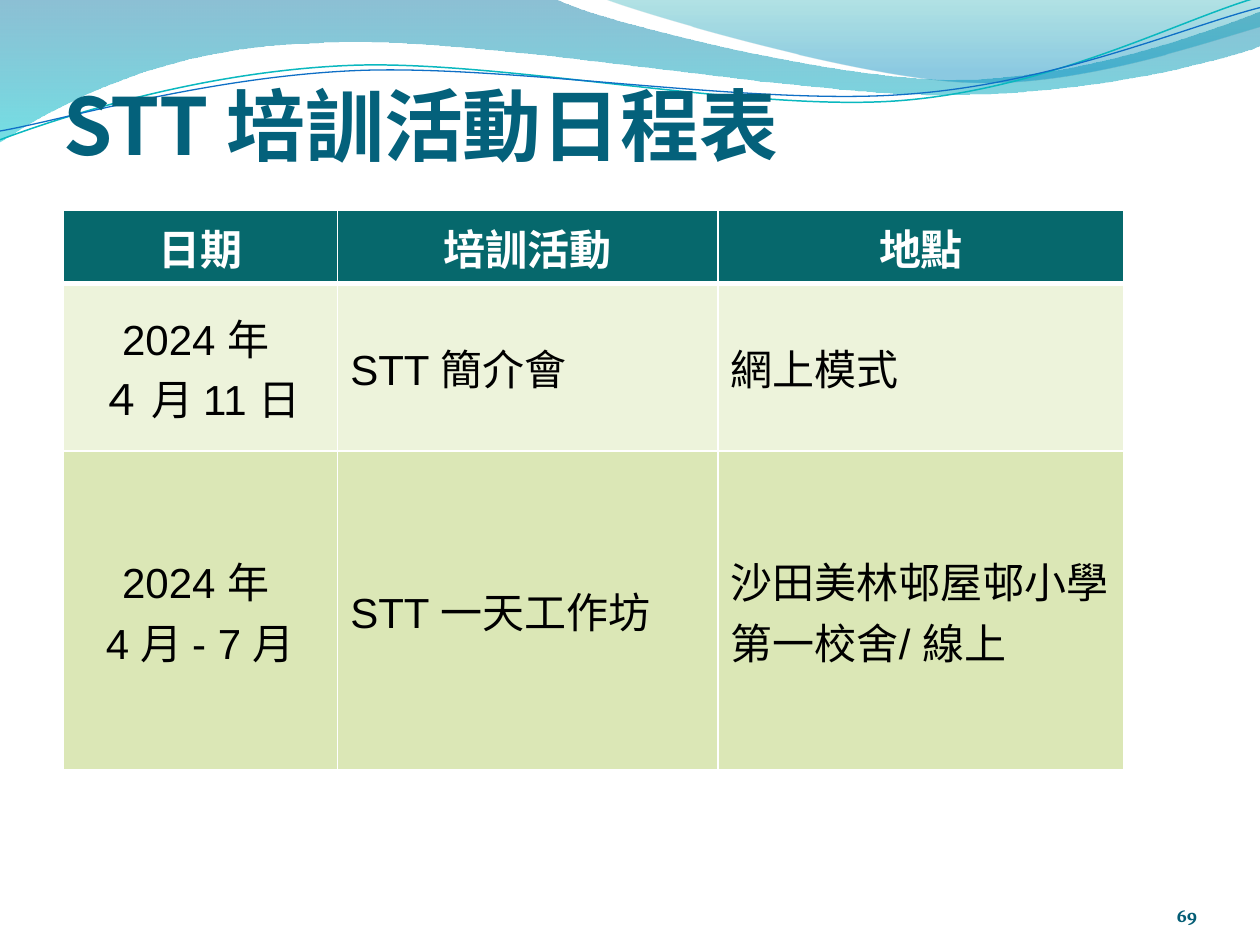
from math import cos, radians, sin

from lxml import etree
from pptx import Presentation
from pptx.dml.color import RGBColor
from pptx.enum.text import MSO_ANCHOR, PP_ALIGN
from pptx.oxml.ns import qn
from pptx.util import Inches, Pt

LEFT, CENTER, RIGHT = PP_ALIGN.LEFT, PP_ALIGN.CENTER, PP_ALIGN.RIGHT
TOP, MIDDLE, BOTTOM = MSO_ANCHOR.TOP, MSO_ANCHOR.MIDDLE, MSO_ANCHOR.BOTTOM

WHITE = RGBColor(0xFF, 0xFF, 0xFF)
BLACK = RGBColor(0x00, 0x00, 0x00)
TITLE_BLUE = RGBColor(0x04, 0x61, 0x7B)
NUMBER_BLUE = RGBColor(0x04, 0x5D, 0x75)
HEADER_TEAL = RGBColor(0x06, 0x68, 0x6C)
ROW_FILLS = [RGBColor(0xED, 0xF3, 0xDB), RGBColor(0xDB, 0xE7, 0xB6)]
WAVE_BLUE = RGBColor(0x00, 0x74, 0xA1)
WAVE_CYAN = RGBColor(0x00, 0xC6, 0xCF)
CREST_TEAL = RGBColor(0x00, 0xA1, 0xA9)
CREST_BLUE = RGBColor(0x00, 0x8B, 0xBF)
LINE_TEAL = RGBColor(0x0A, 0xB8, 0xBF)
LINE_BLUE = RGBColor(0x0F, 0x6F, 0xC6)

CJK_FONT = "Noto Sans CJK SC"
WAVE_TILT = -2.7

BANDS = [
    ((-0.01, -0.01, 10.02, 1.14),
     [(0, 0), (4.4, -0.01), (4.76, 0.17, 6.64, 0.63, 7.58, 0.63),
      (8.53, 0.63, 9.58, 0.26, 10, 0.09), (10.01, 0.36),
      (9.83, 0.44, 8.7, 0.76, 7.46, 0.75), (6.22, 0.75, 3.82, 0.28, 2.57, 0.34),
      (1.29, 0.36, 0.46, 0.83, -0.01, 1.13)],
     [(0, WAVE_BLUE, 45), (1, WAVE_CYAN, 55)]),
    ((4.79, -0.01, 5.21, 0.7),
     [(4.79, -0.01), (5.09, 0.11, 6.82, 0.62, 7.69, 0.65),
      (8.56, 0.69, 9.61, 0.32, 10, 0.21), (10, 0)],
     [(0, CREST_TEAL, 30), (0.8, CREST_BLUE, 45)]),
]
WAVE_LINES = [
    ((-0.02, 0.22, 10.02, 0.71),
     [(0, 1.11), (0.48, 0.93, 1.58, 0.57, 2.77, 0.52),
      (3.95, 0.47, 5.93, 0.89, 7.13, 0.8), (8.33, 0.71, 9.38, 0.15, 9.98, -0.02)],
     LINE_TEAL, 0.85),
    ((-0.02, 0.3, 10.03, 0.58),
     [(0, 1.04), (0.47, 0.96, 1.64, 0.61, 2.83, 0.56),
      (4.03, 0.51, 5.97, 0.84, 7.17, 0.75), (8.36, 0.67, 9.41, 0.21, 10, 0.06)],
     LINE_BLUE, 0.75),
]
COLUMN_WIDTHS = [2.18, 3.02, 3.22]
ROW_HEIGHTS = [0.58, 1.33, 2.53]
SCHEDULE = [
    ["日期", "培訓活動", "地點"],
    ["2024 年 \n４ 月 11 日", "STT 簡介會", "網上模式"],
    ["2024 年 \n4 月 - 7 月", "STT 一天工作坊", "沙田美林邨屋邨小學第一校舍/ 線上"],
]


def write_text(frame, text, *, size, font, color, bold=False, align=LEFT):
    for index, line in enumerate(text.split("\n")):
        paragraph = frame.add_paragraph() if index else frame.paragraphs[0]
        paragraph.alignment = align
        run = paragraph.add_run()
        run.text = line
        run.font.size = Pt(size)
        run.font.name = font
        run.font.bold = bold
        run.font.color.rgb = color
        east_asian = etree.SubElement(run.font._element, qn("a:ea"))
        east_asian.set("typeface", CJK_FONT)


def to_local(point, box, tilt):
    left, top, width, height = box
    x, y = point[0] - left - width / 2, point[1] - top - height / 2
    angle = radians(-tilt)
    return (Inches(x * cos(angle) - y * sin(angle) + width / 2),
            Inches(x * sin(angle) + y * cos(angle) + height / 2))


def set_border(cell, side, width):
    border = etree.SubElement(cell._tc.get_or_add_tcPr(), qn(f"a:{side}"), w=str(Pt(width)))
    fill = etree.SubElement(border, qn("a:solidFill"))
    etree.SubElement(fill, qn("a:srgbClr"), val=str(WHITE))


class SlideBuilder:
    def __init__(self, slide):
        self.slide = slide
        self.shapes = slide.shapes

    def outline(self, box, segments, close, tilt=0):
        local = [[to_local(segment[i:i + 2], box, tilt) for i in range(0, len(segment), 2)]
                 for segment in segments]
        builder = self.shapes.build_freeform(*local[0][0])
        builder.add_line_segments([points[-1] for points in local[1:]], close=close)
        shape = builder.convert_to_shape()
        shape.shadow.inherit = False
        shape.left, shape.top, shape.width, shape.height = map(Inches, box)
        shape.rotation = tilt
        contour = shape._element.spPr.find(".//" + qn("a:path"))
        contour.set("w", str(shape.width))
        contour.set("h", str(shape.height))
        for command, points in zip(contour, local):
            if len(points) == 3:
                command.tag = qn("a:cubicBezTo")
            for child in list(command):
                command.remove(child)
            for x, y in points:
                etree.SubElement(command, qn("a:pt"), x=str(x), y=str(y))
        return shape

    def band(self, box, segments, stops):
        shape = self.outline(box, segments, True)
        shape.line.fill.background()
        shape.fill.gradient()
        shape.fill.gradient_angle = 270
        for stop, (position, color, _) in zip(shape.fill.gradient_stops, stops):
            stop.position = position
            stop.color.rgb = color
        colors = shape._element.spPr.findall(".//" + qn("a:srgbClr"))
        for element, (_, _, opacity) in zip(colors, stops):
            etree.SubElement(element, qn("a:alpha"), val=str(opacity * 1000))

    def wave_line(self, box, segments, color, width):
        shape = self.outline(box, segments, False, WAVE_TILT)
        shape.fill.background()
        shape.line.color.rgb = color
        shape.line.width = Pt(width)

    def place_text(self, shape, text, box, bottom_inset=0, **style):
        shape.left, shape.top, shape.width, shape.height = map(Inches, box)
        frame = shape.text_frame
        frame.word_wrap = True
        frame.vertical_anchor = BOTTOM
        frame.margin_left = frame.margin_right = frame.margin_top = 0
        frame.margin_bottom = Inches(bottom_inset)
        write_text(frame, text, **style)

    def title(self, text, box):
        title = self.shapes.title
        self.shapes._spTree.append(title._element)
        self.place_text(title, text, box, size=45, font=CJK_FONT,
                        color=TITLE_BLUE, bold=True)

    def page_number(self, text, box):
        shape = self.shapes.add_textbox(*map(Inches, box))
        self.place_text(shape, text, box, size=10.5, font="Vollkorn",
                        color=NUMBER_BLUE, bold=True, align=RIGHT)

    def table(self, rows, left, top):
        table = self.shapes.add_table(
            len(rows), len(COLUMN_WIDTHS), Inches(left), Inches(top),
            Inches(sum(COLUMN_WIDTHS)), Inches(sum(ROW_HEIGHTS))).table
        for column, width in zip(table.columns, COLUMN_WIDTHS):
            column.width = Inches(width)
        for row_index, texts in enumerate(rows):
            table.rows[row_index].height = Inches(ROW_HEIGHTS[row_index])
            for column_index, text in enumerate(texts):
                self.cell(table.cell(row_index, column_index), text, row_index, column_index)

    def cell(self, cell, text, row, column):
        header = row == 0
        cell.vertical_anchor = TOP if header else MIDDLE
        for side in ("lnL", "lnR", "lnT", "lnB"):
            thick = (row, side) in ((0, "lnB"), (1, "lnT"))
            set_border(cell, side, 3 if thick else 1)
        cell.fill.solid()
        cell.fill.fore_color.rgb = HEADER_TEAL if header else ROW_FILLS[row - 1]
        write_text(cell.text_frame, text, size=24, font="Arial",
                   color=WHITE if header else BLACK, bold=header,
                   align=CENTER if header or column == 0 else LEFT)


def main():
    presentation = Presentation()
    presentation.slide_width, presentation.slide_height = Inches(10), Inches(7.5)
    builder = SlideBuilder(presentation.slides.add_slide(presentation.slide_layouts[5]))
    for box, segments, stops in BANDS:
        builder.band(box, segments, stops)
    for box, segments, color, width in WAVE_LINES:
        builder.wave_line(box, segments, color, width)
    builder.title("STT 培訓活動日程表", (0.5, 0.42, 9, 0.94))
    builder.page_number("69", (8.67, 6.95, 0.83, 0.4))
    builder.table(SCHEDULE, 0.5, 1.67)
    presentation.save("out.pptx")


if __name__ == "__main__":
    main()
